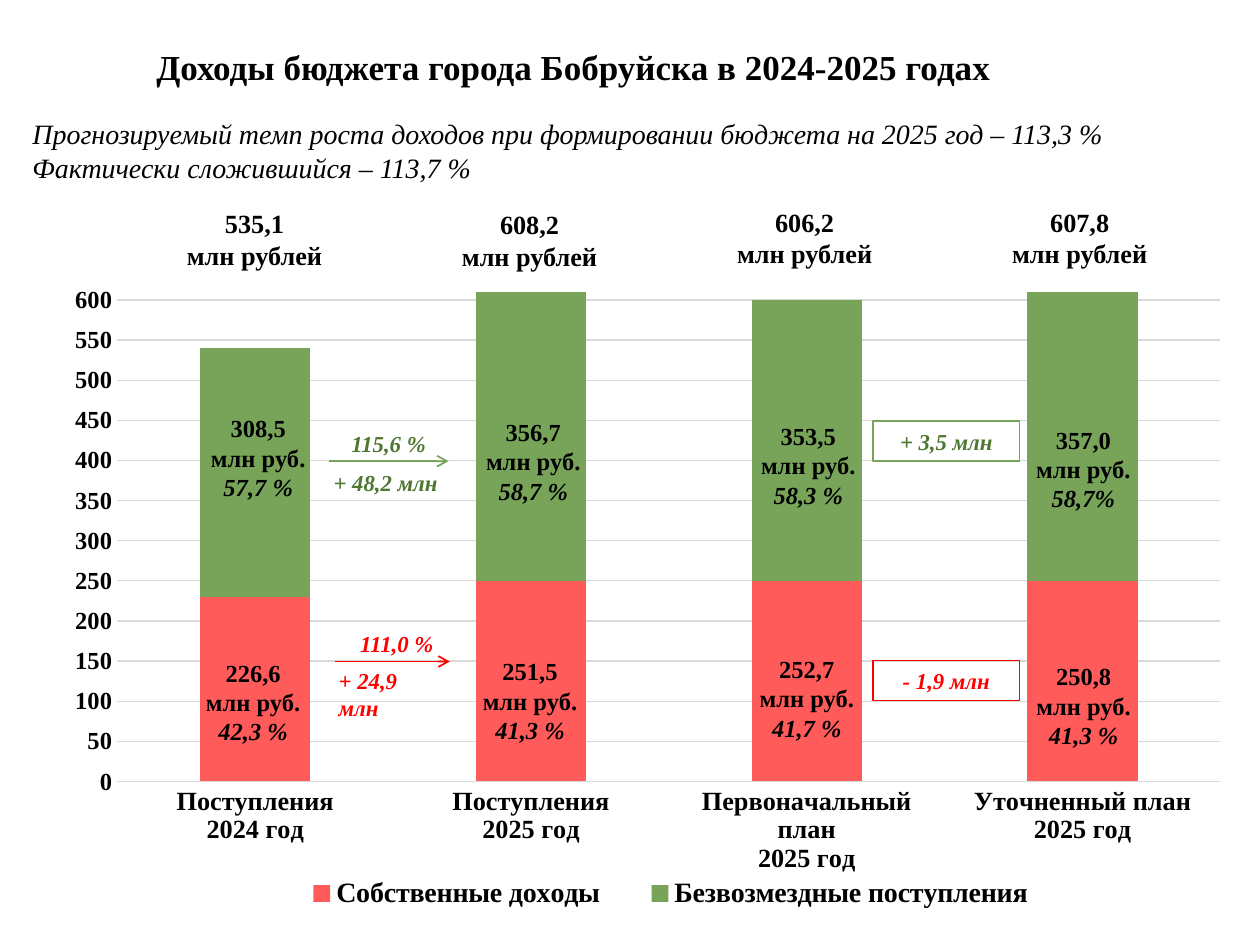
import pptx
import pptx.util
import pptx.chart.data
import pptx.dml.color
import pptx.enum.chart
import pptx.enum.shapes
import pptx.enum.text
import pptx.oxml
import pptx.oxml.ns

THEME = dict(font="Times New Roman", text="000000", grid="D9D9D9", red="FF0000",
             own="FF5B5B", grant="78A45A", grant_text="4D7731",
             title=20, lead=16, legend=16, total=15, label=14, change=13)

TITLE = "Доходы бюджета города Бобруйска в 2024-2025 годах"
LEAD = ["Прогнозируемый темп роста доходов при формировании бюджета на 2025 год – 113,3 %",
        "Фактически сложившийся – 113,7 %"]
CATEGORIES = ["Поступления\n2024 год", "Поступления\n2025 год",
              "Первоначальный план\n2025 год", "Уточненный план\n2025 год"]
SERIES = [("Собственные доходы", "own", [230, 250, 250, 250]),
          ("Безвозмездные поступления", "grant", [310, 360, 350, 360])]
PLOT_AREA = dict(x=0.073, y=0.032, w=0.911, h=0.743)
LEGEND_AREA = dict(x=0.2, y=0.91, w=0.66, h=0.07)
TOTALS = [("535,1", 16), ("608,2", 16.1), ("606,2", 15.9), ("607,8", 15.9)]
LABELS = [
    dict(left=15.3, step=21.97, tops=[51.7, 51.6, 51.4, 52.0],
         values=["226,6", "251,5", "252,7", "250,8"],
         shares=["42,3 %", "41,3 %", "41,7 %", "41,3 %"]),
    dict(left=15.7, step=21.83, tops=[32.3, 32.6, 32.9, 33.2],
         values=["308,5", "356,7", "353,5", "357,0"],
         shares=["57,7 %", "58,7 %", "58,3 %", "58,7%"]),
]
GROWTH = [
    dict(text="111,0 %", box=(27.6, 49.5, 7.9, 3.2), color="red", wrap=False),
    dict(text="+ 24,9 млн", box=(25.9, 52.4, 8.3, 3.7), color="red", wrap=True),
    dict(text="115,6 %", box=(26.9, 33.6, 8.7, 3.2), color="grant_text", wrap=True),
    dict(text="+ 48,2 млн", box=(25.5, 36.7, 10.3, 3.2), color="grant_text", wrap=False),
]
ARROWS = [(26.6, 35.7, 52.5, "red"), (26.1, 35.6, 36.6, "grant")]
REVISIONS = [("+ 3,5 млн", 33.4, "grant", "grant_text"),
             ("- 1,9 млн", 52.4, "red", "red")]

Pt = pptx.util.Pt
ALIGN = pptx.enum.text.PP_ALIGN
ANCHOR = pptx.enum.text.MSO_ANCHOR

prs = pptx.Presentation()
prs.slide_width = pptx.util.Inches(10)
prs.slide_height = pptx.util.Inches(7.5)
COL = prs.slide_width / 100
ROW = prs.slide_height / 75
s = prs.slides.add_slide(prs.slide_layouts[6])


def grid(x, y, w, h):
    return int(x * COL), int(y * ROW), int(w * COL), int(h * ROW)


def rgb(key):
    return pptx.dml.color.RGBColor.from_string(THEME[key])


def style(font, size, color="text", bold=True, italic=False):
    font.name = THEME["font"]
    font.size = Pt(THEME[size])
    font.color.rgb = rgb(color)
    font.bold = bold
    font.italic = italic


def add_text(lines, box, size, color="text", bold=True, italic=False, italic_last=False,
             align=ALIGN.CENTER, anchor=ANCHOR.TOP, wrap=True, spacing=None, border=None):
    if border:
        sp = s.shapes.add_shape(pptx.enum.shapes.MSO_SHAPE.RECTANGLE, *grid(*box))
        sp.shadow.inherit = False
        sp.fill.background()
        sp.line.color.rgb = rgb(border)
        sp.line.width = Pt(0.75)
    else:
        sp = s.shapes.add_textbox(*grid(*box))
    tf = sp.text_frame
    tf.word_wrap = wrap
    tf.vertical_anchor = anchor
    for i, line in enumerate(lines):
        p = tf.paragraphs[0] if i == 0 else tf.add_paragraph()
        p.alignment = align
        if spacing:
            p.line_spacing = spacing
        r = p.add_run()
        r.text = line
        last = italic_last and i == len(lines) - 1
        style(r.font, size, color, bold, italic or last)


def add_arrow(x1, x2, y, color):
    c = s.shapes.add_connector(pptx.enum.shapes.MSO_CONNECTOR.STRAIGHT,
                               int(x1 * COL), int(y * ROW), int(x2 * COL), int(y * ROW))
    c.line.color.rgb = rgb(color)
    c.line.width = Pt(1)
    ns = pptx.oxml.ns.nsdecls("a")
    c.line._get_or_add_ln().append(pptx.oxml.parse_xml(f'<a:tailEnd {ns} type="arrow"/>'))
    c._element.spPr.append(pptx.oxml.parse_xml(f"<a:effectLst {ns}/>"))


def set_layout(parent, index, area, target=""):
    for old in parent.findall(pptx.oxml.ns.qn("c:layout")):
        parent.remove(old)
    modes = "".join(f'<c:{k}Mode val="edge"/>' for k in "xy")
    sizes = "".join(f'<c:{k} val="{v}"/>' for k, v in area.items())
    parent.insert(index, pptx.oxml.parse_xml(
        f'<c:layout {pptx.oxml.ns.nsdecls("c")}><c:manualLayout>'
        f'{target}{modes}{sizes}</c:manualLayout></c:layout>'))


def add_income_chart():
    data = pptx.chart.data.CategoryChartData()
    data.categories = CATEGORIES
    for name, _, values in SERIES:
        data.add_series(name, values)
    chart = s.shapes.add_chart(pptx.enum.chart.XL_CHART_TYPE.COLUMN_STACKED,
                               *grid(2.3, 21.5, 96.1, 52.3), data).chart
    style(chart.font, "label")
    chart.has_title = False
    chart.has_legend = True
    chart.legend.position = pptx.enum.chart.XL_LEGEND_POSITION.BOTTOM
    chart.legend.include_in_layout = False
    style(chart.legend.font, "legend")

    plot = chart.plots[0]
    plot.gap_width, plot.overlap = 150, 100
    plot.vary_by_categories = False
    for series, (_, color, _) in zip(plot.series, SERIES):
        series.format.fill.solid()
        series.format.fill.fore_color.rgb = rgb(color)

    cat, val = chart.category_axis, chart.value_axis
    for axis, size in ((cat, "total"), (val, "label")):
        axis.major_tick_mark = axis.minor_tick_mark = pptx.enum.chart.XL_TICK_MARK.NONE
        style(axis.tick_labels.font, size)
    val.minimum_scale, val.maximum_scale, val.major_unit = 0, 610, 50
    val.tick_labels.number_format = "#,##0"
    val.tick_labels.number_format_is_linked = False
    val.format.line.fill.background()
    val.has_major_gridlines = True
    for line in (cat.format.line, val.major_gridlines.format.line):
        line.color.rgb = rgb("grid")
        line.width = Pt(0.75)

    root = chart._chartSpace.chart
    set_layout(root.plotArea, 0, PLOT_AREA, '<c:layoutTarget val="inner"/>')
    set_layout(root.find(pptx.oxml.ns.qn("c:legend")), 1, LEGEND_AREA)


add_text([TITLE], (0.8, 3.5, 89.4, 5.4), "title", spacing=0.9)
add_income_chart()
for i, (total, top) in enumerate(TOTALS):
    add_text([total, "млн рублей"], (13.3 + 21.83 * i, top, 13.8, 5.9), "total",
             anchor=ANCHOR.MIDDLE, wrap=False)
for text, top, border, color in REVISIONS:
    add_text([text], (69.3, top, 11.6, 3.2), "change", color, italic=True,
             anchor=ANCHOR.MIDDLE, border=border)
for arrow in ARROWS:
    add_arrow(*arrow)
for g in GROWTH:
    add_text([g["text"]], g["box"], "change", g["color"], italic=True,
             align=ALIGN.LEFT, wrap=g["wrap"])
for group in LABELS:
    for i, (value, share, top) in enumerate(zip(group["values"], group["shares"], group["tops"])):
        add_text([value, "млн руб.", share], (group["left"] + group["step"] * i, top, 9.6, 8.1),
                 "label", italic_last=True, wrap=False)
add_text(LEAD, (1.6, 8.8, 91, 6.4), "lead", bold=False, italic=True, align=ALIGN.LEFT)

prs.save("out.pptx")
